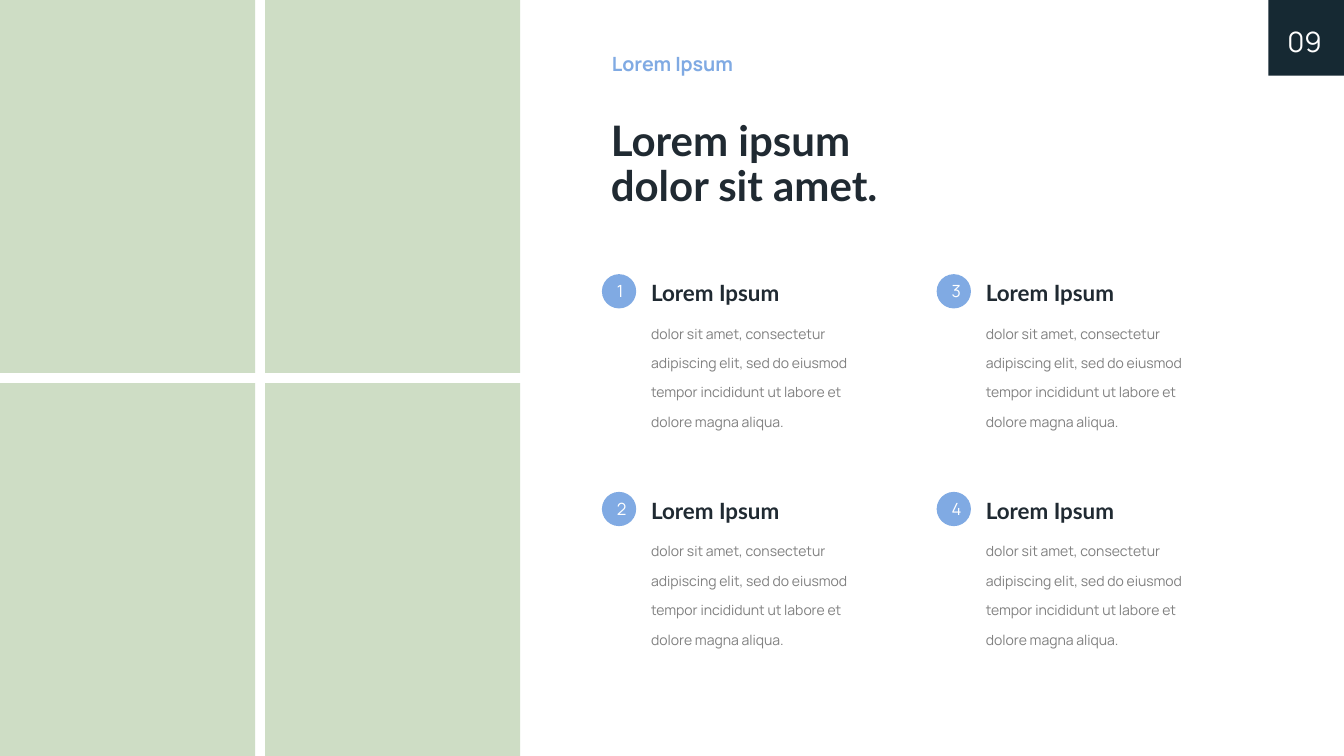
from dataclasses import dataclass
from pptx import Presentation
from pptx.dml.color import RGBColor as RGB
from pptx.enum.shapes import MSO_SHAPE as Shape
from pptx.enum.text import MSO_ANCHOR as Anchor, MSO_AUTO_SIZE as Fit, PP_ALIGN as Align
from pptx.util import Inches, Pt

PAGE = "09"
LABEL = "Lorem Ipsum"
TITLE = ["Lorem ipsum", "dolor sit amet."]
BODY = ("dolor sit amet, consectetur adipiscing elit, sed do eiusmod "
        "tempor incididunt ut labore et dolore magna aliqua.")
ITEMS = [("1", LABEL, BODY), ("2", LABEL, BODY),
         ("3", LABEL, BODY), ("4", LABEL, BODY)]


@dataclass(frozen=True)
class Style:
    font: str
    size: float
    color: str
    bold: bool = False
    lead: float = 1.0


@dataclass(frozen=True)
class Theme:
    tile: str = "CEDDC5"
    blue: str = "80AAE3"
    navy: str = "162933"
    page: Style = Style("Manrope", 20, "FFFFFF")
    label: Style = Style("Manrope", 14, "80AAE3", True)
    title: Style = Style("Lato", 30, "202A32", True, 0.9)
    head: Style = Style("Lato", 16, "202A32", True)
    body: Style = Style("Manrope", 10, "808080", False, 1.75)
    num: Style = Style("Manrope", 12, "FFFFFF")


THEME = Theme()


def write(frame, lines, style, align=Align.LEFT):
    frame.word_wrap = True
    for i, line in enumerate(lines):
        para = frame.add_paragraph() if i else frame.paragraphs[0]
        para.alignment = align
        para.line_spacing = style.lead
        run = para.add_run()
        run.text = line
        font = run.font
        font.name, font.size, font.bold = style.font, Pt(style.size), style.bold
        font.color.rgb = RGB.from_string(style.color)


def add_text(shapes, area, lines, style):
    frame = shapes.add_textbox(*map(Inches, area)).text_frame
    frame.auto_size = Fit.SHAPE_TO_FIT_TEXT
    write(frame, lines, style)


def add_fill(shapes, kind, area, color):
    shape = shapes.add_shape(kind, *map(Inches, area))
    shape.shadow.inherit = False
    shape.fill.solid()
    shape.fill.fore_color.rgb = RGB.from_string(color)
    shape.line.fill.background()
    shape.text_frame.vertical_anchor = Anchor.MIDDLE
    return shape


def add_item(shapes, left, top, item):
    num, head, body = item
    group = shapes.add_group_shape().shapes
    add_text(group, (left + 0.39, top + 0.33, 2.36, 1.25), [body], THEME.body)
    add_text(group, (left + 0.39, top, 2.36, 0.37), [head], THEME.head)
    dot = add_fill(group, Shape.OVAL, (left, top, 0.34, 0.34), THEME.blue)
    write(dot.text_frame, [num], THEME.num, Align.CENTER)


def main():
    deck = Presentation()
    deck.slide_width, deck.slide_height = Inches(13.33), Inches(7.5)
    shapes = deck.slides.add_slide(deck.slide_layouts[6]).shapes

    for col in range(2):
        for row in range(2):
            area = (col * 2.63, row * 3.8, 2.53, 3.7)
            add_fill(shapes, Shape.RECTANGLE, area, THEME.tile)

    badge = add_fill(shapes, Shape.RECTANGLE, (12.58, 0, 0.75, 0.75), THEME.navy)
    frame = badge.text_frame
    frame.margin_left = frame.margin_bottom = 0
    frame.margin_top, frame.margin_right = Inches(0.06), Inches(0.22)
    write(frame, [PAGE], THEME.page, Align.RIGHT)

    add_text(shapes, (5.97, 0.47, 3.75, 0.34), [LABEL], THEME.label)
    add_text(shapes, (5.96, 1.14, 6.22, 1.02), TITLE, THEME.title)

    for i, item in enumerate(ITEMS):
        col, row = divmod(i, 2)
        add_item(shapes, 5.97 + col * 3.32, 2.72 + row * 2.16, item)

    deck.save("out.pptx")


if __name__ == "__main__":
    main()
